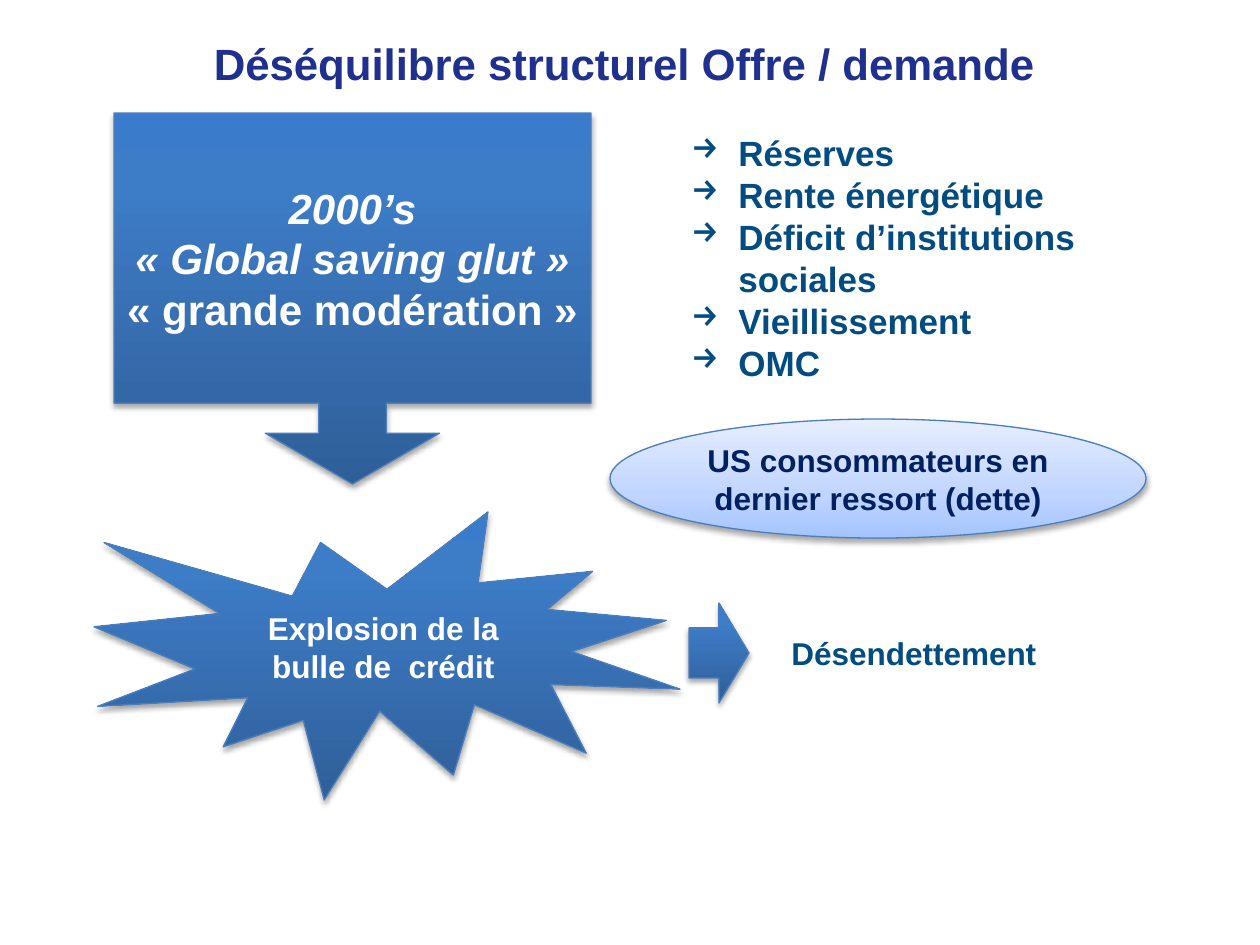
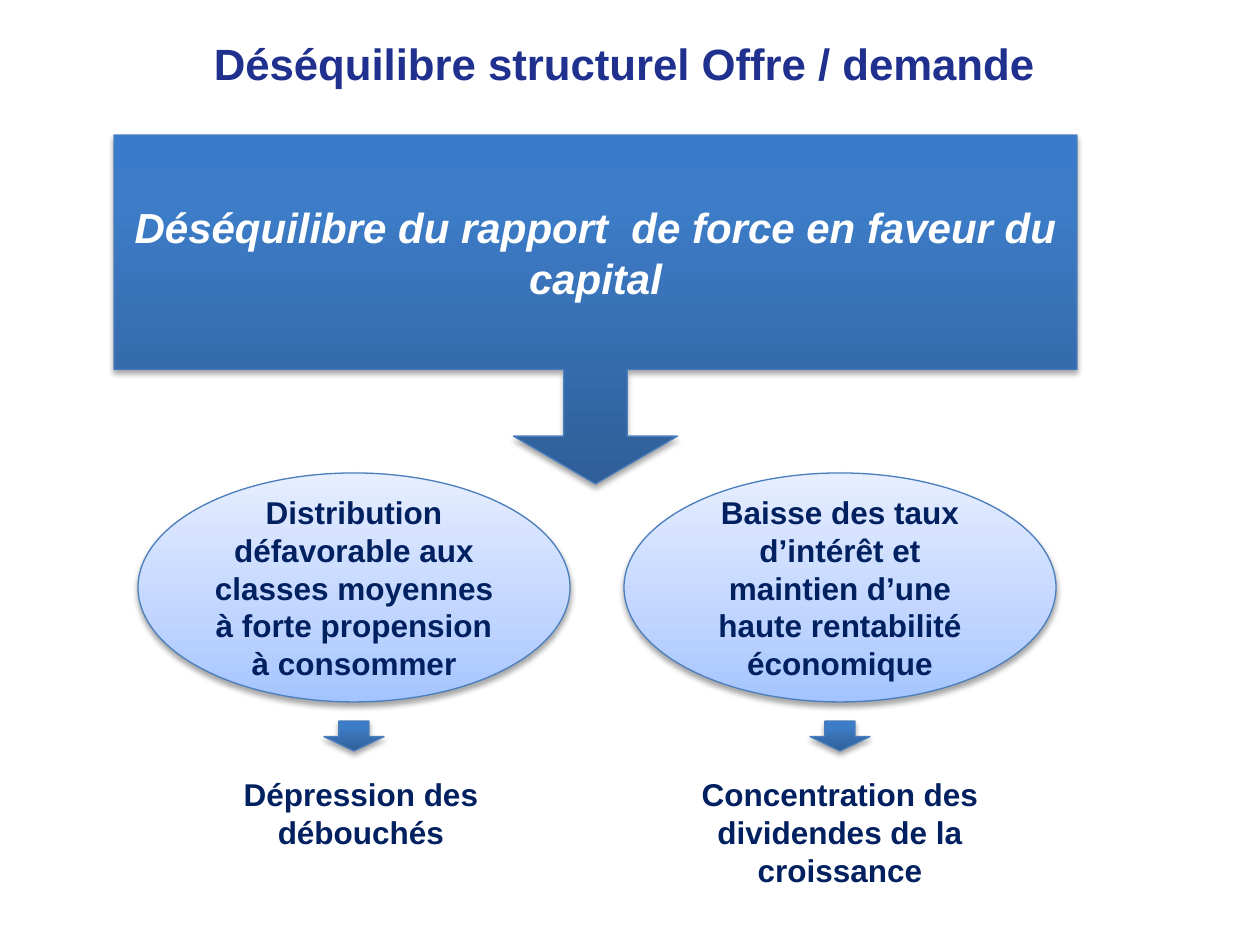
import pptx
import pptx.util
import pptx.dml.color
import pptx.enum.shapes
import pptx.enum.text
import pptx.oxml
import pptx.oxml.ns
from dataclasses import dataclass
from lxml import etree

PX = 914400 / 126  # EMU in one px
SHAPE = pptx.enum.shapes.MSO_SHAPE
ALIGN = pptx.enum.text.PP_ALIGN
ANCHOR = pptx.enum.text.MSO_ANCHOR
AUTOSIZE = pptx.enum.text.MSO_AUTO_SIZE


@dataclass(frozen=True)
class Theme:
    font: str = "Arial"
    title: str = "1F308E"
    accent: str = "024C82"
    navy: str = "002060"
    white: str = "FFFFFF"
    line: str = "4B7EBC"
    # gradient stops (percent, colour), from bottom to top
    blue: tuple = ((0, "2F5F99"), (80, "3D7CC7"), (100, "3A7CCB"))
    pale: tuple = ((0, "A4C4FF"), (35, "BFD4FF"), (100, "E6EEFF"))
    title_size: float = 25
    callout_size: float = 24
    list_size: float = 20
    body_size: float = 18


THEME = Theme()
TITLE = "Déséquilibre structurel Offre / demande"


def px(n):
    return pptx.util.Emu(round(n * PX))


def rgb(color):
    return pptx.dml.color.RGBColor.from_string(color)


def add_child(parent, tag, **attrs):
    child = etree.SubElement(parent, pptx.oxml.ns.qn(tag))
    for name, value in attrs.items():
        child.set(name, str(value))
    return child


def style_text(p, size, color, align=ALIGN.CENTER, italic=None):
    p.alignment = align
    font = p.font
    font.name, font.size, font.bold = THEME.font, pptx.util.Pt(size), True
    font.italic = italic
    font.color.rgb = rgb(color)


def add_block(slide, kind, box, stops=THEME.blue, adjustments=()):
    """Preset shape with a vertical gradient, thin outline and soft shadow."""
    sp = slide.shapes.add_shape(kind, *map(px, box))
    for i, value in enumerate(adjustments):
        sp.adjustments[i] = value
    sp.line.color.rgb = rgb(THEME.line)
    sp.line.width = pptx.util.Pt(0.75)

    # Gradient
    sp.fill.gradient()
    sp.fill.gradient_angle = 90
    sp_pr = sp._element.spPr
    gs_list = sp_pr.find(".//" + pptx.oxml.ns.qn("a:gsLst"))
    for gs in list(gs_list):
        gs_list.remove(gs)
    for pos, color in stops:
        add_child(add_child(gs_list, "a:gs", pos=pos * 1000), "a:srgbClr", val=color)

    # Shadow
    sp.shadow.inherit = False
    effects = sp_pr.find(pptx.oxml.ns.qn("a:effectLst"))
    shadow = add_child(effects, "a:outerShdw", blurRad=pptx.util.Pt(3.1),
                       dist=pptx.util.Pt(1.8), dir=5400000, rotWithShape=0)
    add_child(add_child(shadow, "a:srgbClr", val="000000"), "a:alpha", val=35000)
    return sp


def fill_block(sp, text, size, color, italic=None):
    tf = sp.text_frame
    tf.word_wrap = True
    tf.vertical_anchor = ANCHOR.MIDDLE
    tf.text = text
    for p in tf.paragraphs:
        style_text(p, size, color, italic=italic)
    return tf


def add_callout(slide, box, text, body_share):
    sp = add_block(slide, SHAPE.DOWN_ARROW_CALLOUT, box,
                   adjustments=(0.182, 0.235, 0.137, body_share))
    return fill_block(sp, text, THEME.callout_size, THEME.white, italic=True)


def add_ellipse(slide, box, text):
    sp = add_block(slide, SHAPE.OVAL, box, THEME.pale)
    fill_block(sp, text, THEME.body_size, THEME.navy)


def add_text(slide, box, text, size, color, align=ALIGN.LEFT, wrap=True):
    tf = slide.shapes.add_textbox(*map(px, box)).text_frame
    tf.word_wrap = wrap
    tf.auto_size = AUTOSIZE.SHAPE_TO_FIT_TEXT
    tf.text = text
    for p in tf.paragraphs:
        style_text(p, size, color, align)
    return tf


def add_arrow_list(slide, box, items):
    tf = add_text(slide, box, "\n".join(items), THEME.list_size, THEME.accent)
    for p in tf.paragraphs:
        p_pr = p._p.get_or_add_pPr()
        p_pr.set("marL", str(px(47)))
        p_pr.set("indent", str(-px(47)))
        bullet = pptx.oxml.parse_xml(
            f'<a:buChar {pptx.oxml.ns.nsdecls("a")} char="→"/>')
        p_pr.insert(0, bullet)


def add_outcome(slide, box, cause, effect, label_shift=0):
    """Ellipse, small arrow under it, and the resulting effect as a label."""
    left, top, width, height = box
    center = left + width / 2
    add_ellipse(slide, box, cause)
    arrow_w, label_w = 60, 318
    add_block(slide, SHAPE.DOWN_ARROW,
              (center - arrow_w / 2, top + height + 19, arrow_w, 30),
              adjustments=(0.5, 0.478))
    add_text(slide, (center - label_w / 2 + label_shift, top + height + 67, label_w, 90),
             effect, THEME.body_size, THEME.navy, ALIGN.CENTER)


def add_titled_slide(prs):
    slide = prs.slides.add_slide(prs.slide_layouts[5])
    title = slide.shapes.title
    title.left, title.top, title.width, title.height = map(px, (44, 26, 1160, 50))
    tf = title.text_frame
    tf.text = TITLE
    tf.word_wrap = True
    tf.auto_size = AUTOSIZE.NONE
    tf.vertical_anchor = ANCHOR.TOP
    tf.margin_top = px(11)
    style_text(tf.paragraphs[0], THEME.title_size, THEME.title)
    return slide


def build_credit_slide(prs):
    slide = add_titled_slide(prs)

    # Savings glut and its drivers
    tf = add_callout(slide, (114, 113, 477, 371), "2000’s\n« Global saving glut » ", 0.782)
    r = tf.paragraphs[1].add_run()
    r.text = "« grande modération »"
    r.font.italic = False
    add_arrow_list(slide, (679, 125, 417, 267),
                   ("Réserves", "Rente énergétique", "Déficit d’institutions sociales",
                    "Vieillissement", "OMC"))

    # Credit bubble and deleveraging
    seal = add_block(slide, SHAPE.EXPLOSION1, (94, 512, 586, 288))
    fill_block(seal, "Explosion de la bulle de  crédit", THEME.body_size, THEME.white)
    add_ellipse(slide, (610, 419, 536, 119), "US consommateurs en dernier ressort (dette)")
    add_block(slide, SHAPE.RIGHT_ARROW, (689, 603, 60, 100))
    add_text(slide, (779, 628, 272, 50), "Désendettement",
             THEME.body_size, THEME.accent, wrap=False)


def build_capital_slide(prs):
    slide = add_titled_slide(prs)
    add_callout(slide, (114, 135, 963, 349),
                "Déséquilibre du rapport  de force en faveur du capital", 0.672)
    outcomes = (
        ("Distribution défavorable aux classes moyennes à forte propension à consommer",
         "Dépression des débouchés", 7),
        ("Baisse des taux d’intérêt et maintien d’une haute rentabilité économique",
         "Concentration des dividendes de la croissance", 0),
    )
    for i, (cause, effect, shift) in enumerate(outcomes):
        add_outcome(slide, (138 + i * 486, 473, 432, 229), cause, effect, shift)


def main():
    prs = pptx.Presentation()
    prs.slide_width, prs.slide_height = px(1260), px(945)
    build_credit_slide(prs)
    build_capital_slide(prs)
    prs.save("out.pptx")


if __name__ == "__main__":
    main()
